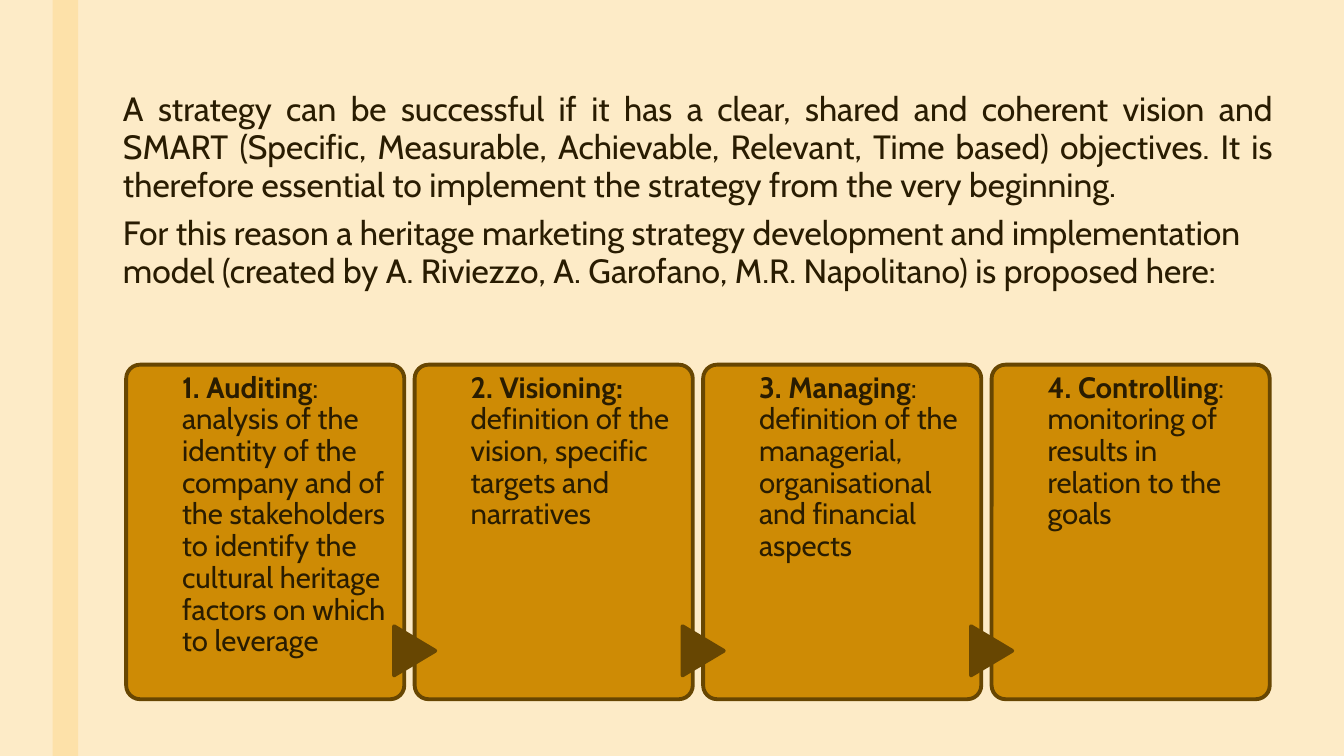
from pptx import Presentation
from pptx.dml.color import RGBColor
from pptx.enum import shapes, text
from pptx.util import Cm, Pt

FONT = "Cabin"
COLORS = {
    "background": "FDEBC7",
    "stripe": "FDE1A9",
    "card": "CE8B05",
    "outline": "674602",
    "text": "291C01",
}
INTRO = [
    ("A strategy can be successful if it has a clear, shared and coherent vision and "
     "SMART (Specific, Measurable, Achievable, Relevant, Time based) objectives. It is "
     "therefore essential to implement the strategy from the very beginning.",
     text.PP_ALIGN.JUSTIFY),
    ("For this reason a heritage marketing strategy development and implementation "
     "model (created by A. Riviezzo, A. Garofano, M.R. Napolitano) is proposed here:",
     text.PP_ALIGN.LEFT),
]
STEPS = [
    ("1. Auditing", ": analysis of the identity of the company and of the stakeholders "
                    "to identify the cultural heritage factors on which to leverage"),
    ("2. Visioning:", " definition of the vision, specific targets and narratives"),
    ("3. Managing", ": definition of the managerial, organisational and financial aspects"),
    ("4. Controlling", ": monitoring of results in relation to the goals"),
]

# Lengths in centimetres
SLIDE_WIDTH, SLIDE_HEIGHT = 33.87, 19.05
CARD_LEFT, CARD_TOP, CARD_WIDTH, CARD_HEIGHT = 3.18, 9.19, 7.01, 8.43
CARD_PITCH = 7.27
TEXT_INDENT, TEXT_WIDTH = 1.41, 5.23
ARROW_WIDTH, ARROW_HEIGHT, ARROW_TOP = 1.24, 1.04, 15.88


def rgb(name):
    return RGBColor.from_string(COLORS[name])


def add_block(slide, kind, box, fill, outline=None):
    shape = slide.shapes.add_shape(kind, *map(Cm, box))
    shape.shadow.inherit = False
    shape.fill.solid()
    shape.fill.fore_color.rgb = rgb(fill)
    if outline:
        shape.line.color.rgb = rgb(outline)
        shape.line.width = Pt(2.75)
    else:
        shape.line.fill.background()
    return shape


def add_text_frame(slide, box, margins):
    """Add a wrapping text box; margins are left, top, right, bottom in cm."""
    frame = slide.shapes.add_textbox(*map(Cm, box)).text_frame
    frame.word_wrap = True
    frame.vertical_anchor = text.MSO_ANCHOR.TOP
    (frame.margin_left, frame.margin_top,
     frame.margin_right, frame.margin_bottom) = map(Cm, margins)
    return frame


def add_run(paragraph, words, size, bold=False):
    run = paragraph.add_run()
    run.text = words
    run.font.name = FONT
    run.font.size = Pt(size)
    run.font.bold = bold
    run.font.color.rgb = rgb("text")


def add_intro(slide):
    frame = add_text_frame(slide, (1.85, 2.18, 30.48, 12.57), (1.25, 0.13, 0.25, 0.13))
    for index, (words, alignment) in enumerate(INTRO):
        paragraph = frame.add_paragraph() if index else frame.paragraphs[0]
        paragraph.alignment = alignment
        paragraph.line_spacing = 0.94
        paragraph.space_before = Pt(5)
        paragraph.space_after = Pt(2)
        add_run(paragraph, words, 24)


def add_step(slide, index, title, description):
    left = CARD_LEFT + index * CARD_PITCH
    card = add_block(slide, shapes.MSO_SHAPE.ROUNDED_RECTANGLE,
                     (left, CARD_TOP, CARD_WIDTH, CARD_HEIGHT), "card", "outline")
    card.adjustments[0] = 0.05
    if index:
        arrow = add_block(slide, shapes.MSO_SHAPE.FLOWCHART_EXTRACT,
                          (left - ARROW_WIDTH / 2, ARROW_TOP, ARROW_WIDTH, ARROW_HEIGHT),
                          "outline", "outline")
        arrow.rotation = 90
    frame = add_text_frame(slide, (left + TEXT_INDENT, CARD_TOP, TEXT_WIDTH, CARD_HEIGHT),
                           (0, 0.2, 0, 0))
    paragraph = frame.paragraphs[0]
    paragraph.line_spacing = 0.9
    add_run(paragraph, title, 21, bold=True)
    add_run(paragraph, description, 21)


def main():
    presentation = Presentation()
    presentation.slide_width = Cm(SLIDE_WIDTH)
    presentation.slide_height = Cm(SLIDE_HEIGHT)
    slide = presentation.slides.add_slide(presentation.slide_layouts[6])
    slide.background.fill.solid()
    slide.background.fill.fore_color.rgb = rgb("background")
    add_block(slide, shapes.MSO_SHAPE.RECTANGLE, (1.33, 0, 0.64, SLIDE_HEIGHT), "stripe")
    add_intro(slide)
    for index, (title, description) in enumerate(STEPS):
        add_step(slide, index, title, description)
    presentation.save("out.pptx")


if __name__ == "__main__":
    main()
